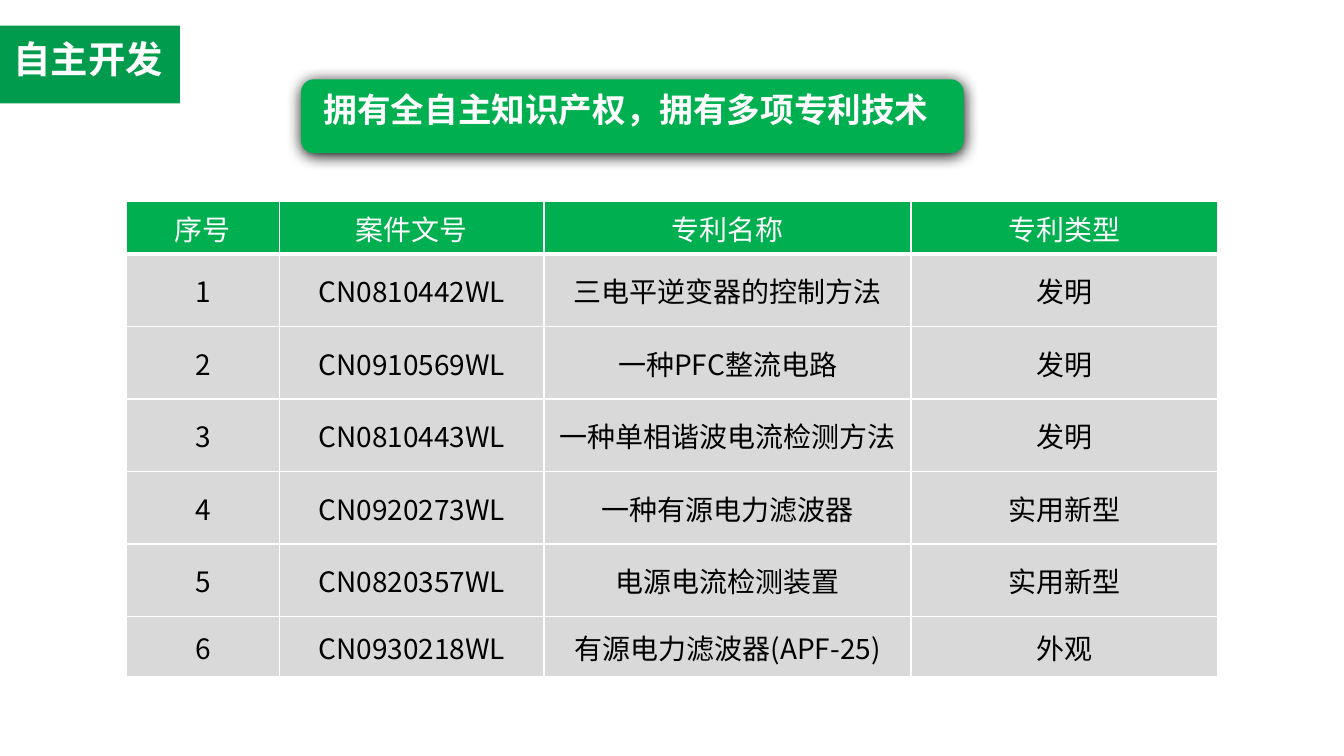
from lxml import etree
from pptx import Presentation
from pptx.dml.color import RGBColor
from pptx.enum.shapes import MSO_SHAPE
from pptx.enum.text import MSO_ANCHOR, PP_ALIGN
from pptx.oxml.ns import qn
from pptx.util import Pt

PX = 9144  # 100 px to the inch
RECT, ROUND_RECT = MSO_SHAPE.RECTANGLE, MSO_SHAPE.ROUNDED_RECTANGLE
TOP, MIDDLE = MSO_ANCHOR.TOP, MSO_ANCHOR.MIDDLE
LEFT, CENTER = PP_ALIGN.LEFT, PP_ALIGN.CENTER
TITLE_ONLY = 5

WHITE = RGBColor(0xFF, 0xFF, 0xFF)
BLACK = RGBColor(0x00, 0x00, 0x00)
DARK_GREEN = RGBColor(0x00, 0x9B, 0x4C)
GREEN = RGBColor(0x00, 0xB0, 0x50)
GREY = RGBColor(0xD9, 0xD9, 0xD9)
FONT = "Noto Sans CJK SC"

PATENTS = [
    ("序号", "案件文号", "专利名称", "专利类型"),
    ("1", "CN0810442WL", "三电平逆变器的控制方法", "发明"),
    ("2", "CN0910569WL", "一种PFC整流电路", "发明"),
    ("3", "CN0810443WL", "一种单相谐波电流检测方法", "发明"),
    ("4", "CN0920273WL", "一种有源电力滤波器", "实用新型"),
    ("5", "CN0820357WL", "电源电流检测装置", "实用新型"),
    ("6", "CN0930218WL", "有源电力滤波器(APF-25)", "外观"),
]
COLUMN_WIDTHS = [114, 197, 273, 228]
ROW_HEIGHTS = [39] + [54] * 5 + [45]


def emu(*lengths):
    return [length * PX for length in lengths]


def write(frame, text, size, color, bold=False, align=LEFT):
    frame.text = text
    paragraph = frame.paragraphs[0]
    paragraph.alignment = align
    font = paragraph.runs[0].font
    font.size, font.bold, font.name = Pt(size), bold, FONT
    font.color.rgb = color
    east_asian = etree.SubElement(font._element, qn("a:ea"))
    east_asian.set("typeface", FONT)


def add_panel(shapes, kind, box, color):
    panel = shapes.add_shape(kind, *emu(*box))
    panel.shadow.inherit = False
    panel.fill.solid()
    panel.fill.fore_color.rgb = color
    panel.line.fill.background()
    return panel


def add_soft_shadow(shape):
    effects = shape._element.spPr.find(qn("a:effectLst"))
    shadow = etree.SubElement(effects, qn("a:outerShdw"), blurRad=str(Pt(8.5)),
                              dist=str(Pt(1)), dir="5400000", rotWithShape="0")
    etree.SubElement(shadow, qn("a:srgbClr"), val=str(BLACK))


def set_borders(cell, widths):
    """Draw white borders; widths are left, right, top, bottom in points."""
    properties = cell._tc.get_or_add_tcPr()
    for i, (side, width) in enumerate(zip("LRTB", widths)):
        line = etree.Element(qn(f"a:ln{side}"), w=str(Pt(width)))
        fill = etree.SubElement(line, qn("a:solidFill"))
        etree.SubElement(fill, qn("a:srgbClr"), val=str(WHITE))
        properties.insert(i, line)


def add_heading(slide, left, top):
    add_panel(slide.shapes, RECT, (left, top, 136, 58), DARK_GREEN)
    title = slide.shapes.title
    title.left, title.top, title.width, title.height = emu(left + 2, top + 3, 383, 44)
    write(title.text_frame, "自主开发", 20, WHITE, bold=True)
    title.text_frame.vertical_anchor = TOP
    # Bring the title in front of its panel
    slide.shapes._spTree.append(title._element)


def add_banner(slide, left, top, width, height):
    banner = slide.shapes.add_group_shape()
    panel = add_panel(banner.shapes, ROUND_RECT, (left, top, width, height), GREEN)
    panel.adjustments[0] = 0.175
    add_soft_shadow(panel)
    claim = banner.shapes.add_textbox(*emu(left + 7, top + 2, width + 22, 40))
    claim.text_frame.word_wrap = True
    write(claim.text_frame, "拥有全自主知识产权，拥有多项专利技术", 18, WHITE, bold=True)


def add_patent_table(slide, left, top):
    box = emu(left, top, sum(COLUMN_WIDTHS), sum(ROW_HEIGHTS))
    table = slide.shapes.add_table(len(PATENTS), len(COLUMN_WIDTHS), *box).table
    table.horz_banding = False
    for column, width in zip(table.columns, COLUMN_WIDTHS):
        column.width = width * PX
    for r, (row, height) in enumerate(zip(table.rows, ROW_HEIGHTS)):
        row.height = height * PX
        is_header = r == 0
        for cell, text in zip(row.cells, PATENTS[r]):
            write(cell.text_frame, text, 15, WHITE if is_header else BLACK, align=CENTER)
            cell.vertical_anchor = MIDDLE
            cell.fill.solid()
            cell.fill.fore_color.rgb = GREEN if is_header else GREY
            # The rule under the header is heavier
            set_borders(cell, (1, 1, 3 if r == 1 else 1, 3 if is_header else 1))


def main():
    deck = Presentation()
    deck.slide_width = 1000 * PX
    deck.slide_height = deck.slide_width * 9 // 16
    slide = deck.slides.add_slide(deck.slide_layouts[TITLE_ONLY])
    add_heading(slide, -2, 19)
    add_banner(slide, 224, 59, 493, 55)
    add_patent_table(slide, 94, 150)
    deck.save("out.pptx")


if __name__ == "__main__":
    main()
